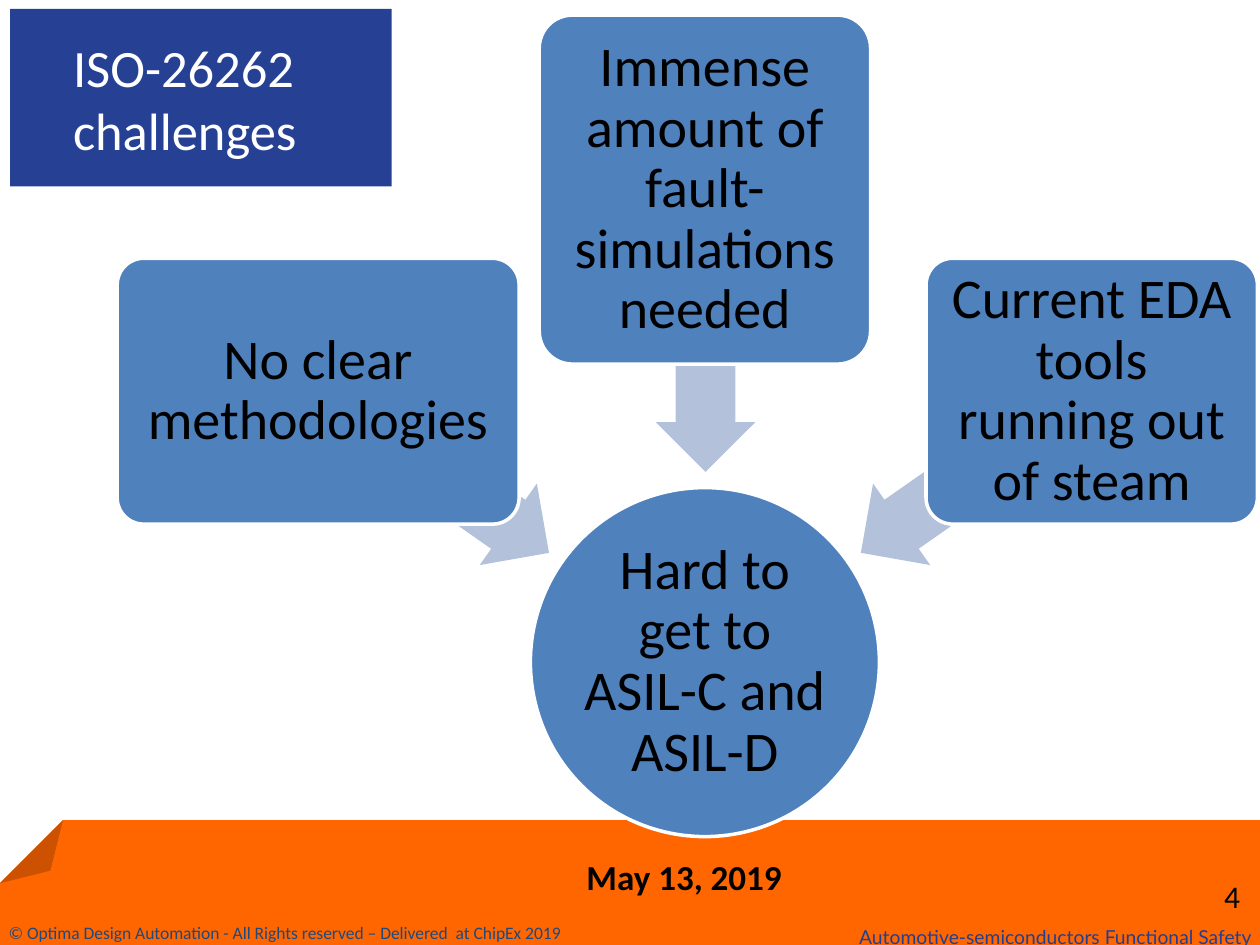
from pptx import Presentation
from pptx.dml.color import RGBColor
from pptx.enum.shapes import MSO_SHAPE
from pptx.enum.text import MSO_ANCHOR, PP_ALIGN
from pptx.oxml.ns import qn
from pptx.util import Inches, Pt
from lxml.etree import SubElement

COLORS = {
    "orange": "FF6600",
    "title": "264194",
    "blue": "4F81BD",
    "arrow": "B3C1DB",
    "white": "FFFFFF",
    "black": "000000",
    "slogan": "223E92",
    "rights": "1F497D",
}


def color(name):
    return RGBColor.from_string(COLORS[name])


def write(shape, text, size=32, font="Calibri", ink="black", bold=False,
          align=PP_ALIGN.CENTER, anchor=MSO_ANCHOR.MIDDLE,
          pads=(0.07, 0.07, 0.07, 0.07), lead=0.9):
    frame = shape.text_frame
    frame.word_wrap = True
    frame.vertical_anchor = anchor
    left, top, right, low = map(Inches, pads)
    frame.margin_left, frame.margin_right = left, right
    frame.margin_top, frame.margin_bottom = top, low
    para = frame.paragraphs[0]
    para.text = text
    para.alignment = align
    para.line_spacing = lead
    for run in para.runs:
        run.font.name = font
        run.font.size = Pt(size)
        run.font.bold = bold
        run.font.color.rgb = color(ink)


def adjust(shape, guides):
    geom = shape._element.spPr.find(qn("a:prstGeom"))
    for old in geom.findall(qn("a:avLst")):
        geom.remove(old)
    values = SubElement(geom, qn("a:avLst"))
    for name, share in guides.items():
        SubElement(values, qn("a:gd"), name=name,
                   fmla=f"val {round(share * 100000)}")


def draw(slide, kind, place, fill, guides=None, turn=0, edge=False):
    shape = slide.shapes.add_shape(kind, *map(Inches, place))
    shape.shadow.inherit = False
    shape.fill.solid()
    shape.fill.fore_color.rgb = color(fill)
    if edge:
        shape.line.color.rgb = color("white")
        shape.line.width = Pt(2)
    else:
        shape.line.fill.background()
    if guides:
        adjust(shape, guides)
    shape.rotation = turn
    return shape


def label(slide, place, text, **style):
    box = slide.shapes.add_textbox(*map(Inches, place))
    write(box, text, anchor=MSO_ANCHOR.TOP, pads=(0.1, 0.05, 0.1, 0.05),
          lead=1.0, **style)


def cause(slide, text, place, spot, turn):
    draw(slide, MSO_SHAPE.LEFT_ARROW, (*spot, 2.24, 0.79), "arrow",
         {"adj1": 0.6, "adj2": 0.5}, turn)
    card = draw(slide, MSO_SHAPE.ROUNDED_RECTANGLE, place, "blue",
                {"adj": 0.1}, edge=True)
    write(card, text)


def footer(slide):
    draw(slide, MSO_SHAPE.FOLDED_CORNER, (0, 6.51, 10, 1), "orange",
         {"adj": 0.5}, 180)
    label(slide, (4.27, 6.74, 2.32, 0.68), "May 13, 2019", size=20, bold=True)
    label(slide, (7.61, 6.91, 2.33, 0.4), "4", size=18, align=PP_ALIGN.RIGHT)
    label(slide, (6.72, 7.29, 4.58, 0.29),
          "Automotive-semiconductors Functional Safety", size=11,
          font="Lato", ink="slogan", align=PP_ALIGN.LEFT)
    label(slide, (-0.03, 7.27, 5.33, 0.27),
          "© Optima Design Automation - All Rights reserved – "
          "Delivered  at ChipEx 2019",
          size=10, ink="rights", align=PP_ALIGN.LEFT)


def main():
    deck = Presentation()
    deck.slide_width, deck.slide_height = Inches(10), Inches(7.5)
    slide = deck.slides.add_slide(deck.slide_layouts[6])
    footer(slide)

    title = draw(slide, MSO_SHAPE.RECTANGLE, (0.08, 0.07, 3.03, 1.41), "title")
    write(title, "ISO-26262\nchallenges", size=30, ink="white",
          align=PP_ALIGN.LEFT, pads=(0.5, 0.2, 0.1, 0.2), lead=1.0)

    goal = draw(slide, MSO_SHAPE.OVAL, (4.21, 3.87, 2.77, 2.77), "blue",
                edge=True)
    write(goal, "Hard to get to ASIL-C and ASIL-D", pads=(0.02,) * 4)

    causes = [
        ("No clear methodologies", (0.93, 2.05, 3.19, 2.11), (2.32, 3.35), 215),
        ("Immense amount of fault-simulations needed",
         (4.28, 0.12, 2.63, 2.77), (4.48, 2.23), 270),
        ("Current EDA tools running out of steam",
         (7.35, 2.05, 2.63, 2.11), (6.63, 3.35), 325),
    ]
    for item in causes:
        cause(slide, *item)
    deck.save("out.pptx")


if __name__ == "__main__":
    main()
